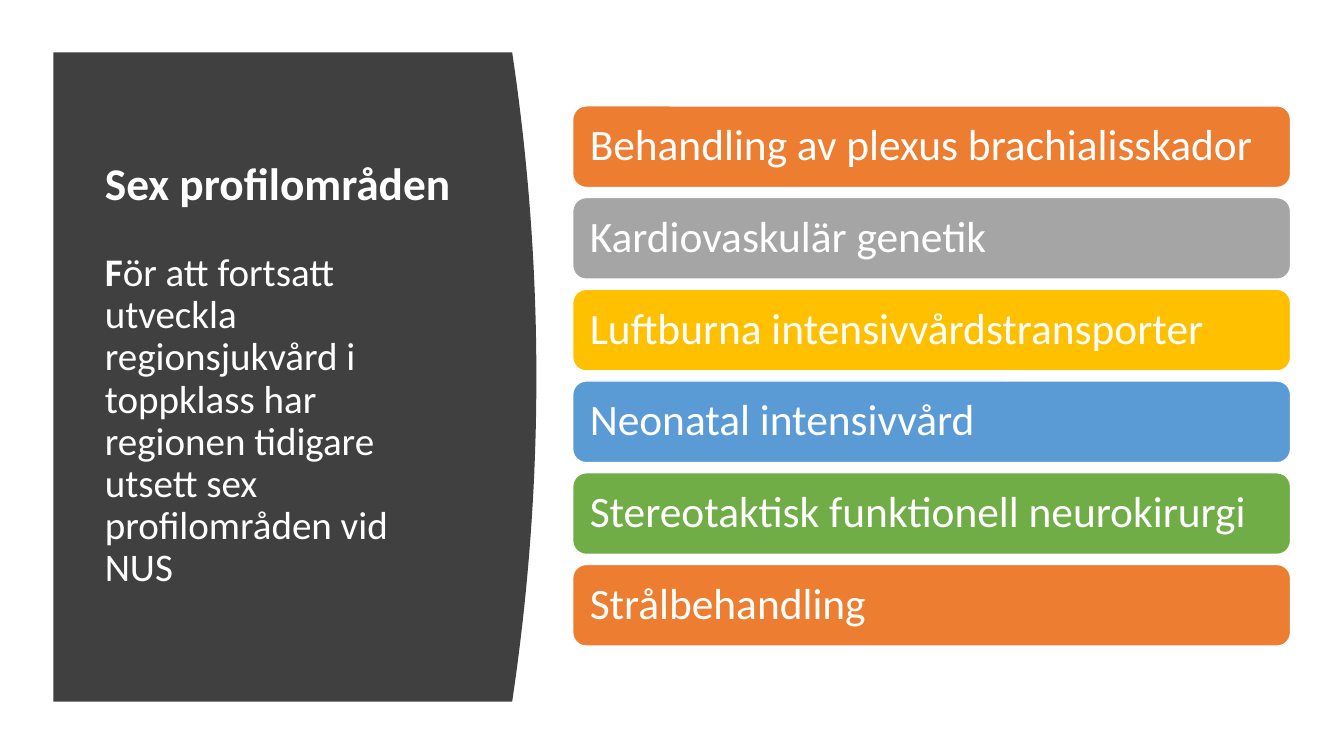
from dataclasses import dataclass

from pptx import Presentation
from pptx import util as u
from pptx.dml.color import RGBColor
from pptx.enum import shapes, text
from pptx.util import Inches


@dataclass(frozen=True)
class Theme:
    font: str = "Calibri"
    white: str = "FFFFFF"
    panel: str = "404040"
    bars: tuple = ("ED7D31", "A5A5A5", "FFC000", "5B9BD5", "70AD47")
    heading_size: float = 32.4
    body_size: float = 27.9
    bar_size: float = 31


THEME = Theme()

HEADING = "Sex profilområden"
INTRO_INITIAL = "F"
INTRO_REST = ("ör att fortsatt utveckla regionsjukvård i toppklass har "
              "regionen tidigare utsett sex profilområden vid NUS")
PROFILE_AREAS = (
    "Behandling av plexus brachialisskador",
    "Kardiovaskulär genetik",
    "Luftburna intensivvårdstransporter",
    "Neonatal intensivvård",
    "Stereotaktisk funktionell neurokirurgi",
    "Strålbehandling",
)


def paint(fill, color):
    fill.solid()
    fill.fore_color.rgb = RGBColor.from_string(color)


def format_paragraph(para, size, bold=False):
    para.alignment = text.PP_ALIGN.LEFT
    para.line_spacing = 0.9
    para.font.name = THEME.font
    para.font.size = u.Pt(size)
    para.font.bold = bold
    para.font.color.rgb = RGBColor.from_string(THEME.white)


def add_curved_panel(page, left, top, width, height, bulge, steps=40):
    """Draw a panel whose right edge bows outward as a parabola."""
    edge = []
    for step in range(steps + 1):
        offset = 2 * step / steps - 1
        edge.append((Inches(left + width + bulge * (1 - offset ** 2)),
                     Inches(top + height * step / steps)))
    builder = page.shapes.build_freeform(Inches(left), Inches(top))
    builder.add_line_segments(edge + [(Inches(left), Inches(top + height))])
    panel = builder.convert_to_shape()
    panel.shadow.inherit = False
    paint(panel.fill, THEME.panel)
    panel.line.fill.background()
    return panel


def fill_title(title):
    title.left, title.top = Inches(0.94), Inches(1.11)
    title.width, title.height = Inches(3.74), Inches(5.24)
    frame = title.text_frame
    frame.auto_size = text.MSO_AUTO_SIZE.NONE
    frame.word_wrap = True
    frame.vertical_anchor = text.MSO_ANCHOR.MIDDLE

    heading = frame.paragraphs[0]
    heading.text = HEADING
    format_paragraph(heading, THEME.heading_size, bold=True)
    heading.space_after = u.Pt(30)

    intro = frame.add_paragraph()
    format_paragraph(intro, THEME.body_size)
    initial = intro.add_run()
    initial.text = INTRO_INITIAL
    initial.font.bold = True
    intro.add_run().text = INTRO_REST


def add_bar(page, label, color, top):
    bar = page.shapes.add_shape(
        shapes.MSO_SHAPE.ROUNDED_RECTANGLE,
        Inches(5.68), Inches(top), Inches(7.12), Inches(0.81))
    bar.shadow.inherit = False
    paint(bar.fill, color)
    paint(bar.line.fill, THEME.white)
    bar.line.width = u.Pt(1)
    frame = bar.text_frame
    frame.word_wrap = True
    frame.vertical_anchor = text.MSO_ANCHOR.MIDDLE
    frame.margin_left = frame.margin_right = Inches(0.13)
    para = frame.paragraphs[0]
    para.text = label
    format_paragraph(para, THEME.bar_size)


def main():
    deck = Presentation()
    deck.slide_width, deck.slide_height = Inches(13.33), Inches(7.5)
    page = deck.slides.add_slide(deck.slide_layouts.get_by_name("Title Only"))

    panel = add_curved_panel(page, 0.53, 0.52, 4.55, 6.44, bulge=0.24)
    title = page.shapes.title
    title.element.addprevious(panel.element)  # keeps the panel behind the title
    fill_title(title)

    for index, label in enumerate(PROFILE_AREAS):
        color = THEME.bars[index % len(THEME.bars)]
        add_bar(page, label, color, top=1.05 + 0.91 * index)

    deck.save("out.pptx")


if __name__ == "__main__":
    main()
